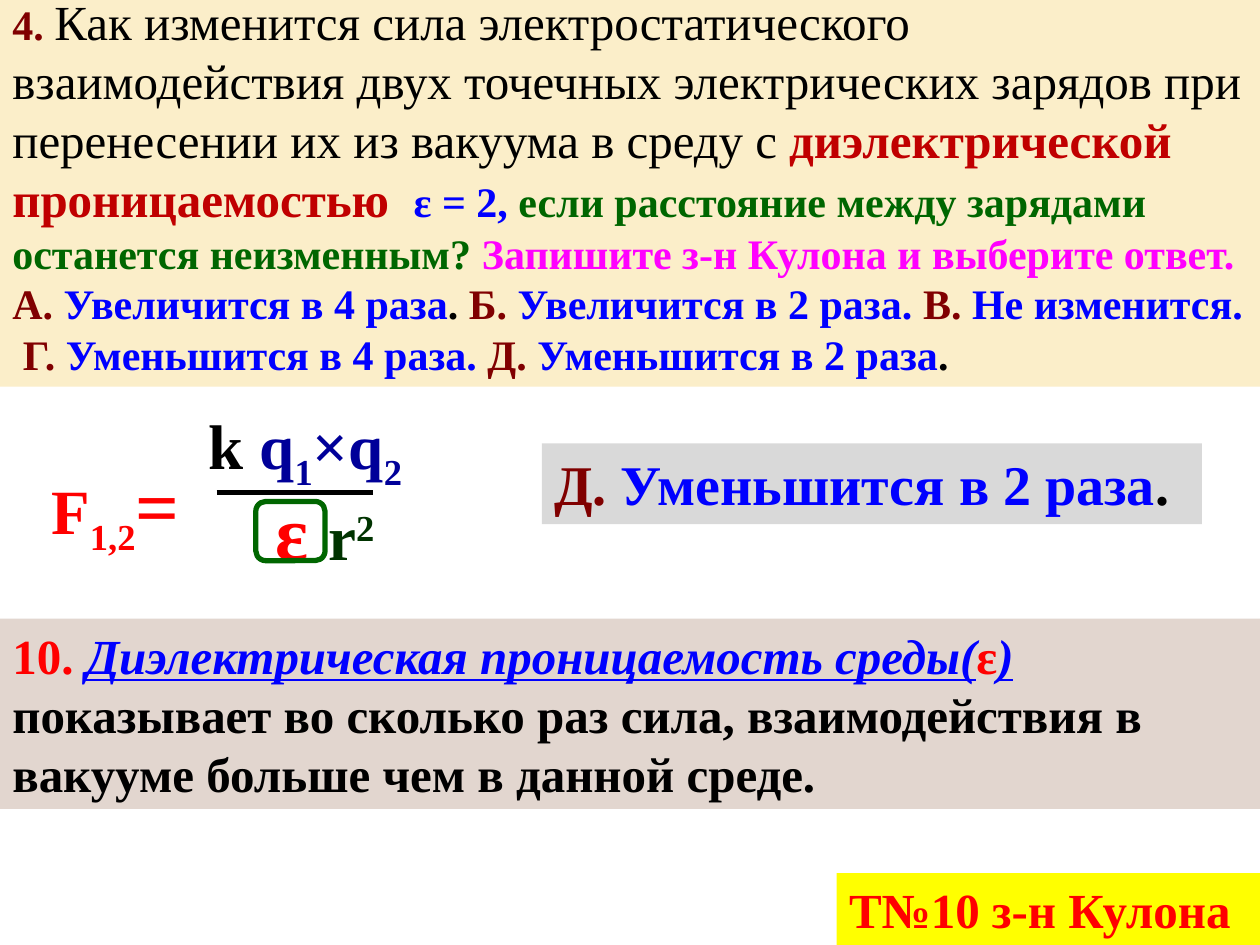
from lxml import etree
from pptx import Presentation, util as u
from pptx.dml.color import RGBColor
from pptx.enum import shapes, text
from pptx.oxml.ns import qn

BLACK = RGBColor(0, 0, 0)
RED = RGBColor(0xFF, 0, 0)
BRICK = RGBColor(0xC0, 0, 0)
MAROON = RGBColor(0x80, 0, 0)
BLUE = RGBColor(0, 0, 0xFF)
NAVY = RGBColor(0, 0, 0x99)
GREEN = RGBColor(0, 0x66, 0)
PINE = RGBColor(0, 0x33, 0)
PINK = RGBColor(0xFF, 0, 0xFF)
CREAM = RGBColor(0xFB, 0xEE, 0xC9)
GREY = RGBColor(0xD9, 0xD9, 0xD9)
YELLOW = RGBColor(0xFF, 0xFF, 0)
SAND = RGBColor(0xE2, 0xD6, 0xCF)

WIDE, HIGH = 10, 7.5
COLS, ROWS = 100, 75


def put(para, words, size, color, bold=True, slant=False, base=0):
    """Add one run; slant also underlines, base shifts by percent."""
    run = para.add_run()
    run.text = words
    font = run.font
    font.name, font.size = "Times New Roman", u.Pt(size)
    font.bold, font.italic, font.underline = bold, slant, slant
    font.color.rgb = color
    if base:
        run._r.get_or_add_rPr().set("baseline", str(base * 1000))


class Board:
    """Current slide, measured on a grid of COLS by ROWS."""

    def __init__(self, deck):
        self.slide = deck.slides.add_slide(deck.slide_layouts[6])
        self.items = self.slide.shapes

    def spot(self, col, row, cols, rows):
        dx, dy = WIDE / COLS, HIGH / ROWS
        return [u.Inches(n) for n in (col * dx, row * dy, cols * dx, rows * dy)]

    def label(self, shape, runs, size, mid=False):
        frame = shape.text_frame
        frame.word_wrap = True
        frame.vertical_anchor = text.MSO_ANCHOR.MIDDLE if mid else text.MSO_ANCHOR.TOP
        para = frame.paragraphs[0]
        para.alignment = text.PP_ALIGN.LEFT
        for words, color, *more in runs:
            put(para, words, **{"size": size, "color": color, **(more[0] if more else {})})
        return frame

    def panel(self, at, fill, runs, size, mid=False):
        box = self.items.add_shape(shapes.MSO_SHAPE.RECTANGLE, *self.spot(*at))
        box.shadow.inherit = False
        box.fill.solid()
        box.fill.fore_color.rgb = fill
        box.line.fill.background()
        self.label(box, runs, size, mid)

    def term(self, at, runs, size=36, indent=0.1):
        box = self.items.add_textbox(*self.spot(*at))
        frame = self.label(box, runs, size)
        frame.margin_left, frame.margin_top = u.Inches(indent), u.Inches(0.11)
        frame.paragraphs[0].space_after = u.Pt(10)

    def rule(self, col, row, cols, color):
        x, y, w, _ = self.spot(col, row, cols, 0)
        line = self.items.add_connector(shapes.MSO_CONNECTOR.STRAIGHT, x, y, x + w, y)
        line.line.color.rgb, line.line.width = color, u.Pt(3)
        etree.SubElement(line._element.spPr, qn("a:effectLst"))

    def ring(self, at, color):
        box = self.items.add_shape(shapes.MSO_SHAPE.ROUNDED_RECTANGLE, *self.spot(*at))
        box.shadow.inherit = False
        box.fill.background()
        box.line.color.rgb, box.line.width = color, u.Pt(3)


def main():
    deck = Presentation()
    deck.slide_width, deck.slide_height = u.Inches(WIDE), u.Inches(HIGH)
    board = Board(deck)
    big = {"size": 28}

    # Question and its answers
    board.panel((0, -1.3, 100, 32), CREAM, [
        ("4. ", MAROON),
        ("Как изменится сила электростатического взаимодействия двух точечных "
         "электрических зарядов при перенесении их из вакуума в среду с",
         BLACK, {"size": 28, "bold": False}),
        (" диэлектрической проницаемостью  ", BRICK, big),
        ("ε = 2, ", BLUE),
        ("если расстояние между зарядами останется неизменным? ", GREEN),
        ("Запишите з-н Кулона и выберите ответ.  ", PINK),
        ("А. ", MAROON), ("Увеличится в 4 раза", BLUE), (". ", BLACK),
        ("Б. ", MAROON), ("Увеличится в 2 раза. ", BLUE),
        ("В. ", MAROON), ("Не изменится.  ", BLUE),
        ("Г. ", MAROON), ("Уменьшится в 4 раза.", BLUE),
        (" Д. ", MAROON), ("Уменьшится в 2 раза", BLUE), (".", BLACK),
    ], 24, mid=True)

    # Coulomb's law
    sub, large = {"base": -25}, {"size": 44}
    board.term((15.9, 37.3, 18, 5.9), [
        ("ε ", RED, large), ("r", PINE), ("2", PINE, {"base": 30})], indent=0.6)
    board.term((3.1, 35.2, 17.2, 10.9), [
        ("F", RED), ("1,2", RED, sub), ("=", RED, large)])
    board.term((15.6, 31.2, 21.3, 7.8), [
        ("k ", BLACK), ("q", NAVY), ("1", NAVY, sub), ("×q", NAVY), ("2", NAVY, sub)])
    board.rule(17.2, 39.1, 12.4, BLACK)

    # Right answer and topic label
    board.panel((43, 35.2, 52.4, 6.4), GREY, [
        ("Д. ", MAROON), ("Уменьшится в 2 раза", BLUE), (".", BLACK)], 32)
    board.panel((66.4, 69.3, 33.6, 5.7), YELLOW, [("Т№10 з-н Кулона", RED)], 28)
    board.ring((20.3, 39.8, 5.5, 4.7), GREEN)

    # Definition
    slant = {"slant": True}
    board.panel((0, 49.1, 100, 15.1), SAND, [
        ("10. ", RED),
        ("Диэлектрическая проницаемость среды(", BLUE, slant),
        ("ε", RED), (")", BLUE, slant),
        (" показывает во сколько раз сила, взаимодействия в вакууме "
         "больше чем в данной среде.", BLACK),
    ], 28, mid=True)

    deck.save("out.pptx")


if __name__ == "__main__":
    main()
